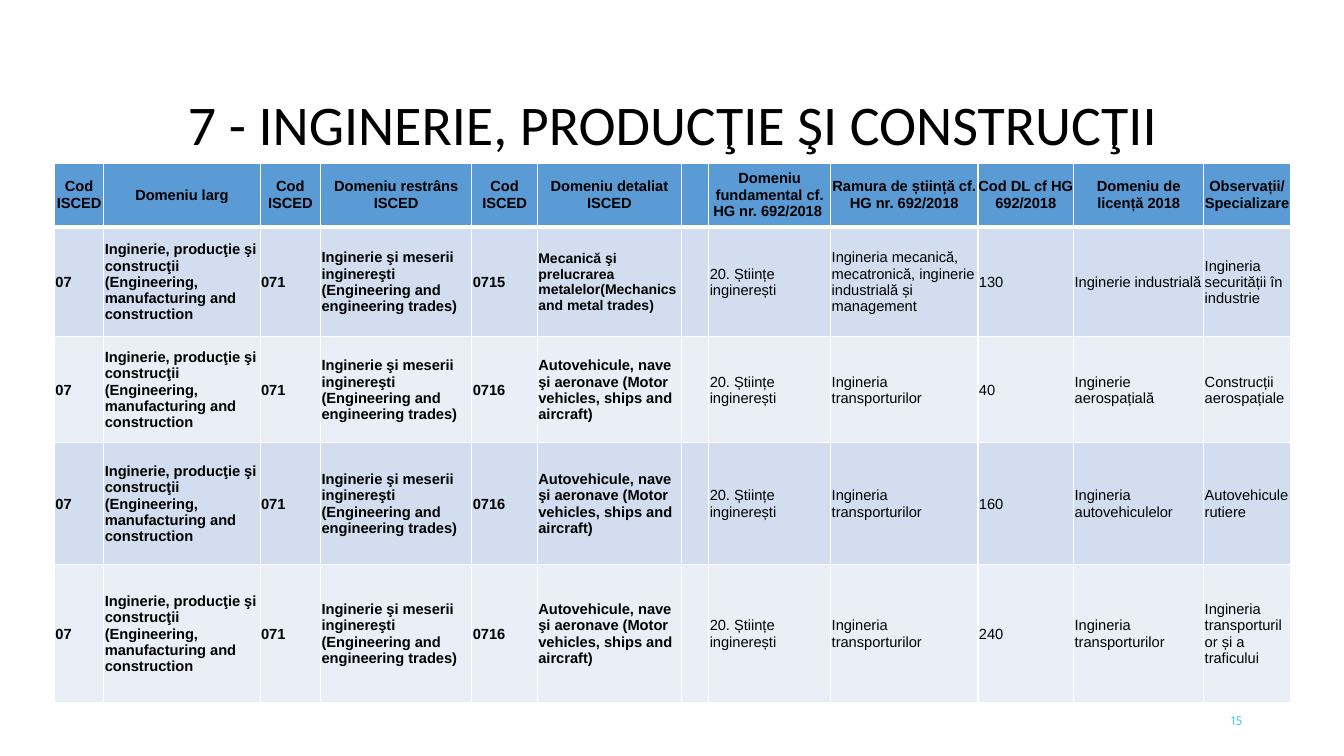
from dataclasses import dataclass

from lxml import etree
from pptx import Presentation
from pptx.dml.color import RGBColor
from pptx.enum.text import MSO_ANCHOR, PP_ALIGN
from pptx.oxml.ns import qn
from pptx.util import Inches, Pt

LEFT, CENTER, RIGHT = PP_ALIGN.LEFT, PP_ALIGN.CENTER, PP_ALIGN.RIGHT
MIDDLE = MSO_ANCHOR.MIDDLE


@dataclass(frozen=True)
class Theme:
    text: str = "000000"
    page_number: str = "5FCBEF"
    header: str = "5B9BD5"
    bands: tuple = ("D2DEEF", "EAEFF7")
    border: str = "FFFFFF"
    title_font: str = "Calibri"
    table_font: str = "Arial"
    number_font: str = "Cabin"
    title_size: float = 40
    table_size: float = 10.5
    compact_size: float = 10
    number_size: float = 9


THEME = Theme()

# Table content
COLUMN_WIDTHS = [0.49, 1.55, 0.6, 1.5, 0.65, 1.43, 0.27, 1.21, 1.46, 0.95, 1.29, 0.86]
ROW_HEIGHTS = [0.63, 1.09, 1.05, 1.21, 1.37]
GAP_COLUMN = 6
HEADERS = [
    "Cod ISCED", "Domeniu larg", "Cod ISCED", "Domeniu restrâns ISCED",
    "Cod ISCED", "Domeniu detaliat ISCED", "",
    "Domeniu fundamental cf. HG nr. 692/2018 ",
    "Ramura de știință cf. HG nr. 692/2018", "Cod DL cf HG 692/2018",
    "Domeniu de licență 2018", "Observații/ Specializare",
]
BROAD_FIELD = [
    "07", "Inginerie, producţie şi construcţii (Engineering, manufacturing and construction",
    "071", "Inginerie şi meserii inginereşti (Engineering and engineering trades)",
]
MECHANICS = ["0715", "Mecanică şi prelucrarea metalelor(Mechanics and metal trades)"]
VEHICLES = ["0716", "Autovehicule, nave şi aeronave (Motor vehicles, ships and aircraft)"]
SCIENCES = "20. Științe inginerești"
TRANSPORT = "Ingineria transporturilor"
# Detailed field, then branch, degree code, degree field and specialisation
PROGRAMMES = [
    (MECHANICS, ["Ingineria mecanică, mecatronică, inginerie industrială și management",
                 "130", "Inginerie industrială", "Ingineria securității în industrie"]),
    (VEHICLES, [TRANSPORT, "40", "Inginerie aerospațială", "Construcții aerospațiale"]),
    (VEHICLES, [TRANSPORT, "160", "Ingineria autovehiculelor", "Autovehicule rutiere"]),
    (VEHICLES, [TRANSPORT, "240", TRANSPORT, "Ingineria transporturilor și a traficului"]),
]


def write_text(text_frame, text, *, font, size, color=THEME.text, bold=False,
               align=LEFT, line_spacing=None):
    text_frame.word_wrap = True
    paragraph = text_frame.paragraphs[0]
    paragraph.alignment = align
    if line_spacing:
        paragraph.line_spacing = line_spacing
    run = paragraph.add_run()
    run.text = text
    run.font.name = font
    run.font.size = Pt(size)
    run.font.bold = bold
    run.font.color.rgb = RGBColor.from_string(color)


def add_text_box(slide, left, top, width, height, text, **text_format):
    box = slide.shapes.add_textbox(Inches(left), Inches(top), Inches(width), Inches(height))
    box.text_frame.vertical_anchor = MIDDLE
    write_text(box.text_frame, text, **text_format)


def set_borders(cell, bottom, top):
    properties = cell._tc.get_or_add_tcPr()
    for side, points in (("lnL", 1), ("lnR", 1), ("lnT", top), ("lnB", bottom)):
        line = etree.SubElement(properties, qn(f"a:{side}"), w=str(Pt(points)))
        fill = etree.SubElement(line, qn("a:solidFill"))
        etree.SubElement(fill, qn("a:srgbClr"), val=THEME.border)


def fill_cell(cell, text, row, column):
    is_header = row == 0
    set_borders(cell, bottom=3 if is_header else 1, top=3 if row == 1 else 1)
    cell.fill.solid()
    color = THEME.header if is_header else THEME.bands[(row - 1) % 2]
    cell.fill.fore_color.rgb = RGBColor.from_string(color)
    if not text:
        return
    inset = Inches(0 if is_header else 0.01)
    cell.margin_left = cell.margin_right = cell.margin_top = inset
    cell.margin_bottom = 0
    cell.vertical_anchor = MIDDLE
    write_text(cell.text_frame, text, font=THEME.table_font,
               size=THEME.compact_size if text == MECHANICS[1] else THEME.table_size,
               bold=is_header or column < GAP_COLUMN,
               align=CENTER if is_header else LEFT)


def add_field_table(slide, left, top, rows):
    table = slide.shapes.add_table(
        len(rows), len(COLUMN_WIDTHS), Inches(left), Inches(top),
        Inches(sum(COLUMN_WIDTHS)), Inches(sum(ROW_HEIGHTS))).table
    for column, width in zip(table.columns, COLUMN_WIDTHS):
        column.width = Inches(width)
    for row, height in zip(table.rows, ROW_HEIGHTS):
        row.height = Inches(height)
    for row, texts in enumerate(rows):
        for column, text in enumerate(texts):
            fill_cell(table.cell(row, column), text, row, column)


def main():
    presentation = Presentation()
    presentation.slide_width = Inches(13.33)
    presentation.slide_height = Inches(7.5)
    slide = presentation.slides.add_slide(presentation.slide_layouts[6])

    # Page number and title
    add_text_box(slide, 9.42, 6.95, 3, 0.4, "15", font=THEME.number_font,
                 size=THEME.number_size, color=THEME.page_number, align=RIGHT)
    add_text_box(slide, 0.92, 0.9, 11.5, 0.72, "7 - INGINERIE, PRODUCŢIE ŞI CONSTRUCŢII",
                 font=THEME.title_font, size=THEME.title_size, align=CENTER, line_spacing=0.9)

    # Table of study fields
    rows = [HEADERS] + [BROAD_FIELD + detailed + ["", SCIENCES] + degree
                        for detailed, degree in PROGRAMMES]
    add_field_table(slide, 0.54, 1.62, rows)

    presentation.save("out.pptx")


if __name__ == "__main__":
    main()
